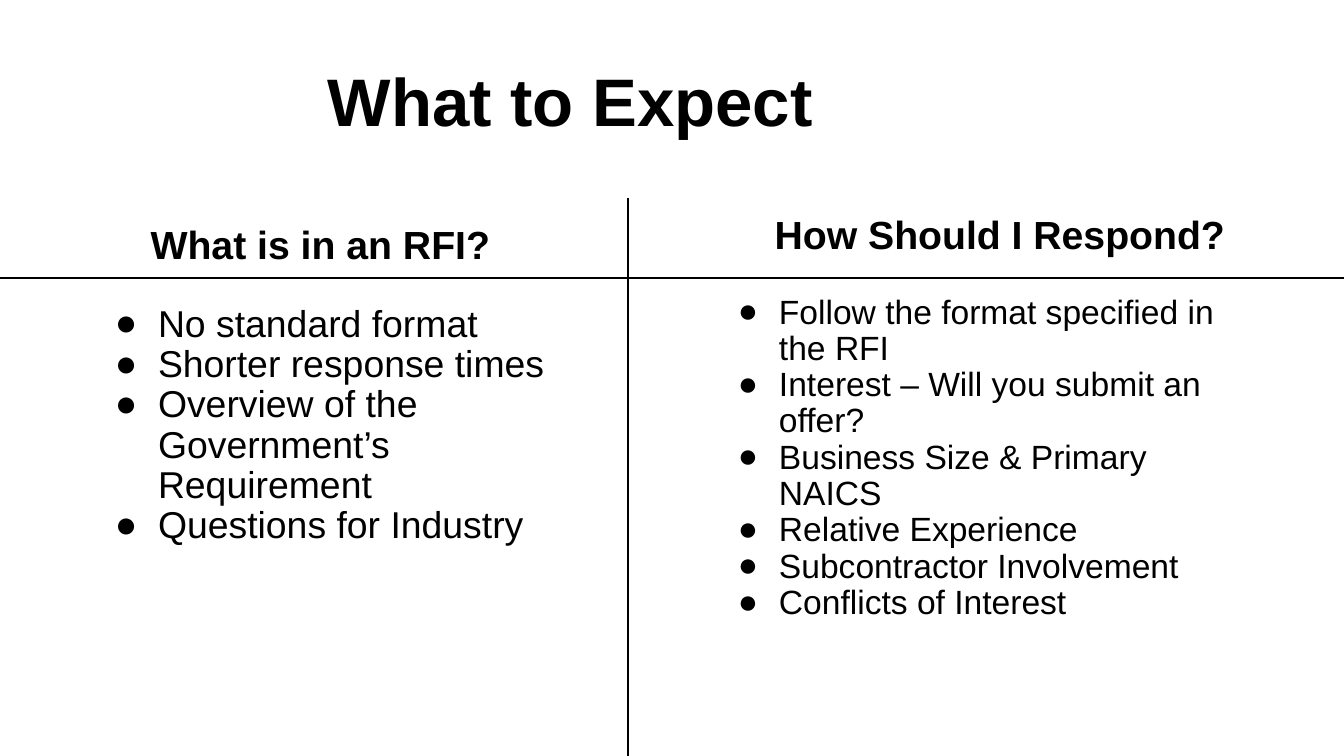
"""Build the two-column slide on what to expect from an RFI."""
import pptx
import pptx.util
import pptx.dml.color
import pptx.enum.shapes
import pptx.enum.text
import pptx.oxml

TITLE = "What to Expect"
COLUMNS = [
    {
        "head": "What is in an RFI?", "head_box": (65, 224, 484, 66), "head_spacing": 0.8,
        "list_box": (98, 300, 524, 353), "list_size": 20, "hang": 43,
        "items": [
            "No standard format",
            "Shorter response times",
            "Overview of the Government’s Requirement",
            "Questions for Industry",
        ],
    },
    {
        "head": "How Should I Respond?", "head_box": (730, 211, 513, 66), "head_spacing": 0.9,
        "list_box": (719, 290, 524, 448), "list_size": 18, "hang": 41,
        "items": [
            "Follow the format specified in the RFI",
            "Interest – Will you submit an offer?",
            "Business Size & Primary NAICS",
            "Relative Experience",
            "Subcontractor Involvement",
            "Conflicts of Interest",
        ],
    },
]
WIDTH, HEIGHT = 1344, 756
TITLE_BOX = (23, 47, 1095, 102)
RULES = [(0, 278, WIDTH, 278), (628, 198, 628, HEIGHT)]
INDENT, HEAD_HANG = 51, 24
THEME = {"font": "Arial", "ink": pptx.dml.color.RGBColor(0, 0, 0),
         "title": 36, "head": 21, "rule": 1.5, "before": 8}
ANCHOR = pptx.enum.text.MSO_ANCHOR
ALIGN = pptx.enum.text.PP_ALIGN


def px(n):
    return pptx.util.Emu(round(n * 914400 / 134.4))


def place(sp, box, inset, anchor):
    sp.left, sp.top, sp.width, sp.height = map(px, box)
    tf = sp.text_frame
    tf.word_wrap = True
    tf.auto_size = pptx.enum.text.MSO_AUTO_SIZE.NONE
    tf.vertical_anchor = anchor
    tf.margin_left = tf.margin_right = px(9)
    tf.margin_top = tf.margin_bottom = px(inset)
    return tf


def write(p, text, size, align, bold=False, spacing=1.0, before=0):
    p.alignment, p.line_spacing = align, spacing
    p.space_before = pptx.util.Pt(before)
    r = p.add_run()
    r.text = text
    r.font.name, r.font.size, r.font.bold = THEME["font"], pptx.util.Pt(size), bold
    r.font.color.rgb = THEME["ink"]


def indent(p, hang, bullet=None):
    pPr = p._p.get_or_add_pPr()
    pPr.set("marL", str(px(INDENT)))
    pPr.set("indent", str(-px(hang)))
    ns = 'xmlns:a="http://schemas.openxmlformats.org/drawingml/2006/main"'
    marks = [f"<a:buNone {ns}/>"]
    if bullet:
        marks = [f'<a:buClr {ns}><a:srgbClr val="{THEME["ink"]}"/></a:buClr>',
                 f'<a:buFont {ns} typeface="{THEME["font"]}"/>',
                 f'<a:buChar {ns} char="{bullet}"/>']
    for mark in marks:
        pPr.append(pptx.oxml.parse_xml(mark))


def add_column(head, body, col):
    p = place(head, col["head_box"], 5, ANCHOR.TOP).paragraphs[0]
    write(p, col["head"], THEME["head"], ALIGN.CENTER, True, col["head_spacing"], THEME["before"])
    indent(p, HEAD_HANG)
    tf = place(body, col["list_box"], 5, ANCHOR.TOP)
    for i, item in enumerate(col["items"]):
        p = tf.add_paragraph() if i else tf.paragraphs[0]
        write(p, item, col["list_size"], ALIGN.LEFT, spacing=0.9, before=0 if i else THEME["before"])
        indent(p, col["hang"], "●")


def add_rule(s, ends):
    line = s.shapes.add_connector(pptx.enum.shapes.MSO_CONNECTOR.STRAIGHT, *map(px, ends))
    line.line.color.rgb = THEME["ink"]
    line.line.width = pptx.util.Pt(THEME["rule"])
    line._element.spPr.append(pptx.oxml.parse_xml(
        '<a:effectLst xmlns:a="http://schemas.openxmlformats.org/drawingml/2006/main"/>'))


def main():
    prs = pptx.Presentation()
    prs.slide_width, prs.slide_height = px(WIDTH), px(HEIGHT)
    s = prs.slides.add_slide(prs.slide_layouts.get_by_name("Comparison"))
    title, *parts = s.placeholders
    tf = place(title, TITLE_BOX, 9, ANCHOR.BOTTOM)
    write(tf.paragraphs[0], TITLE, THEME["title"], ALIGN.CENTER, True)
    for head, body, col in zip(parts[::2], parts[1::2], COLUMNS):
        add_column(head, body, col)
    for ends in RULES:
        add_rule(s, ends)
    prs.save("out.pptx")


if __name__ == "__main__":
    main()
